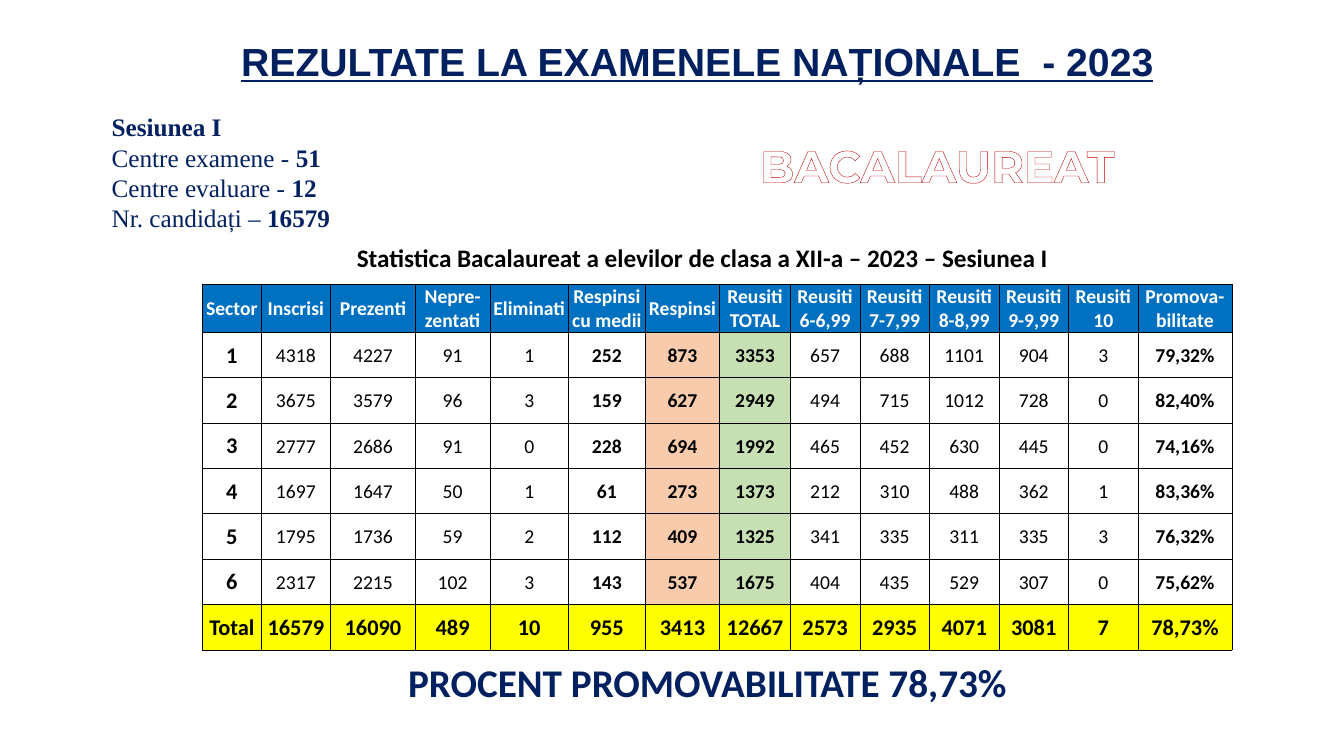
from dataclasses import dataclass

from lxml.etree import SubElement
from pptx import Presentation
from pptx.dml.color import RGBColor
from pptx.enum.text import MSO_ANCHOR, MSO_AUTO_SIZE, PP_ALIGN
from pptx.oxml import parse_xml
from pptx.oxml.ns import nsdecls, qn
from pptx.util import Inches, Pt

# Content: each line is a list of (text, bold) runs
TITLE = [[("REZULTATE LA EXAMENELE NAȚIONALE  - 2023", True)]]
EXAM = [[("BACALAUREAT", True)]]
SESSION = [
    [("Sesiunea I", True)],
    [("Centre examene - ", False), ("51", True)],
    [("Centre evaluare - ", False), ("12", True)],
    [("Nr. candidați – ", False), ("16579", True)],
]
CAPTION = [[("Statistica Bacalaureat a elevilor de clasa a XII-a – 2023 – Sesiunea I", True)]]
PASS_RATE = [[("PROCENT PROMOVABILITATE 78,73%", True)]]

HEADER = ["Sector", "Inscrisi", "Prezenti", "Nepre-\nzentati", "Eliminati",
          "Respinsi\ncu medii", "Respinsi", "Reusiti\nTOTAL", "Reusiti\n6-6,99",
          "Reusiti\n7-7,99", "Reusiti\n8-8,99", "Reusiti\n9-9,99",
          "Reusiti\n10", "Promova-\nbilitate"]
SECTORS = [
    ["1", "4318", "4227", "91", "1", "252", "873", "3353", "657", "688", "1101", "904", "3", "79,32%"],
    ["2", "3675", "3579", "96", "3", "159", "627", "2949", "494", "715", "1012", "728", "0", "82,40%"],
    ["3", "2777", "2686", "91", "0", "228", "694", "1992", "465", "452", "630", "445", "0", "74,16%"],
    ["4", "1697", "1647", "50", "1", "61", "273", "1373", "212", "310", "488", "362", "1", "83,36%"],
    ["5", "1795", "1736", "59", "2", "112", "409", "1325", "341", "335", "311", "335", "3", "76,32%"],
    ["6", "2317", "2215", "102", "3", "143", "537", "1675", "404", "435", "529", "307", "0", "75,62%"],
]
TOTAL = ["Total", "16579", "16090", "489", "10", "955", "3413", "12667",
         "2573", "2935", "4071", "3081", "7", "78,73%"]

COLUMN_WIDTHS = [0.58, 0.69, 0.84, 0.74, 0.78, 0.76, 0.74, 0.7] + [0.69] * 5 + [0.93]
HEADER_HEIGHT, ROW_HEIGHT = 0.47, 0.45
BOLD_COLUMNS = {0, 5, 6, 7, 13}
FAILED_COLUMN, PASSED_COLUMN = 6, 7


@dataclass(frozen=True)
class Theme:
    navy: str = "002060"
    blue: str = "0070C0"
    red: str = "C00000"
    white: str = "FFFFFF"
    black: str = "000000"
    failed: str = "F8CBAD"
    passed: str = "C6E0B4"
    total: str = "FFFF00"
    heading: int = 28
    exam: int = 32
    body: int = 18
    emphasis: int = 16
    cell: int = 14
    sans: str = "Calibri"


THEME = Theme()

prs = Presentation()
prs.slide_width, prs.slide_height = Inches(13.33), Inches(7.5)
slide = prs.slides.add_slide(prs.slide_layouts[6])


def add_run(paragraph, text, size, color, bold, font=THEME.sans):
    run = paragraph.add_run()
    run.text = text
    run.font.name, run.font.size, run.font.bold = font, Pt(size), bold
    run.font.color.rgb = RGBColor.from_string(color)
    return run


def add_text(lines, box, size, color, font=THEME.sans, align=PP_ALIGN.LEFT,
             underline=False, outline=None):
    frame = slide.shapes.add_textbox(*map(Inches, box)).text_frame
    frame.word_wrap = True
    frame.auto_size = MSO_AUTO_SIZE.SHAPE_TO_FIT_TEXT
    for index, line in enumerate(lines):
        paragraph = frame.add_paragraph() if index else frame.paragraphs[0]
        paragraph.alignment = align
        for text, bold in line:
            run = add_run(paragraph, text, size, color, bold, font)
            if underline:
                run.font.underline = True
            if outline:
                line_color, width = outline
                run.font._element.insert(0, parse_xml(
                    f'<a:ln {nsdecls("a")} w="{Pt(width)}"><a:solidFill>'
                    f'<a:srgbClr val="{line_color}"/></a:solidFill></a:ln>'))


def add_borders(cell):
    properties = cell._tc.get_or_add_tcPr()
    for side in ("a:lnL", "a:lnR", "a:lnT", "a:lnB"):
        border = SubElement(properties, qn(side), w=str(Pt(0.5)))
        solid = SubElement(border, qn("a:solidFill"))
        SubElement(solid, qn("a:srgbClr"), val=THEME.black)


def cell_style(row, column):
    """Return fill, text colour, size and bold for a table position."""
    if row == 0:
        return THEME.blue, THEME.white, THEME.cell, True
    if row == len(SECTORS) + 1:
        return THEME.total, THEME.black, THEME.emphasis, True
    fill = {FAILED_COLUMN: THEME.failed, PASSED_COLUMN: THEME.passed}.get(column)
    size = THEME.emphasis if column == 0 else THEME.cell
    return fill, THEME.black, size, column in BOLD_COLUMNS


def fill_cell(cell, text, fill, color, size, bold):
    cell.vertical_anchor = MSO_ANCHOR.MIDDLE
    cell.margin_left = cell.margin_top = cell.margin_right = Inches(0.01)
    cell.margin_bottom = 0
    add_borders(cell)
    if fill:
        cell.fill.solid()
        cell.fill.fore_color.rgb = RGBColor.from_string(fill)
    else:
        cell.fill.background()
    paragraph = cell.text_frame.paragraphs[0]
    paragraph.alignment = PP_ALIGN.CENTER
    for index, part in enumerate(text.split("\n")):
        if index:
            paragraph.add_line_break()
        add_run(paragraph, part, size, color, bold)


# Headings and session details
add_text(TITLE, (1.01, 0.32, 11.81, 0.57), THEME.heading, THEME.navy, "Arial",
         PP_ALIGN.CENTER, underline=True, outline=(THEME.blue, 0.75))
add_text(CAPTION, (3.44, 2.36, 7.55, 0.4), THEME.body, THEME.black)
add_text(PASS_RATE, (3.95, 6.48, 7.46, 0.57), THEME.heading, THEME.navy)
add_text(EXAM, (7.44, 1.32, 4.29, 0.64), THEME.exam, THEME.white, "Montserrat",
         outline=(THEME.red, 2.25))
add_text(SESSION, (1.01, 1.06, 3.13, 1.31), THEME.body, THEME.navy, "Times New Roman")

# Results table
results = [HEADER, *SECTORS, TOTAL]
row_heights = [HEADER_HEIGHT] + [ROW_HEIGHT] * (len(results) - 1)
table = slide.shapes.add_table(
    len(results), len(HEADER), Inches(2.01), Inches(2.82),
    Inches(sum(COLUMN_WIDTHS)), Inches(sum(row_heights))).table
table.first_row = table.horz_banding = False
for column, width in zip(table.columns, COLUMN_WIDTHS):
    column.width = Inches(width)
for row, height in zip(table.rows, row_heights):
    row.height = Inches(height)
for row, values in enumerate(results):
    for column, text in enumerate(values):
        fill_cell(table.cell(row, column), text, *cell_style(row, column))

prs.save("out.pptx")
